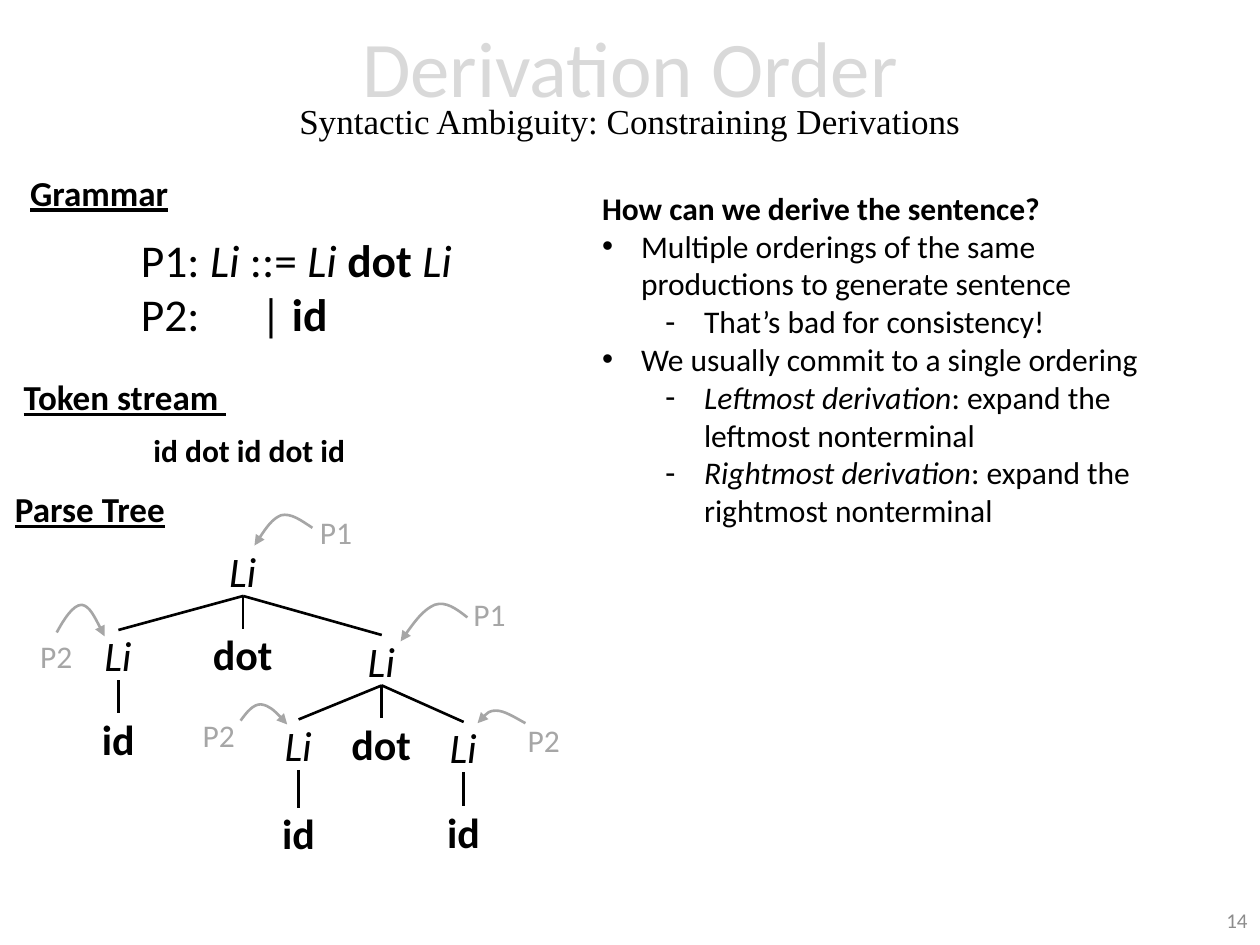
import pptx
import pptx.dml.color
import pptx.enum.shapes
import pptx.enum.text
import pptx.oxml
import pptx.oxml.ns
import pptx.util
from pptx.util import Inches

BLACK, GREY = "000000", "A6A6A6"
ALIGN = pptx.enum.text.PP_ALIGN
MIDDLE = pptx.enum.text.MSO_ANCHOR.MIDDLE
NODE_HEIGHT = 0.4
NODE_WIDTHS = {"Li": 0.42, "dot": 0.68, "id": 0.46}

# name: (text, centre x, top)
NODES = {
    "root": ("Li", 1.93, 4.33),
    "left": ("Li", 0.94, 5.0),
    "left id": ("id", 0.94, 5.66),
    "dot": ("dot", 1.93, 4.99),
    "right": ("Li", 3.03, 5.04),
    "right left": ("Li", 2.37, 5.71),
    "right left id": ("id", 2.37, 6.41),
    "right dot": ("dot", 3.03, 5.7),
    "right right": ("Li", 3.68, 5.73),
    "right right id": ("id", 3.68, 6.4),
}
EDGES = [
    ("root", "left"), ("root", "dot"), ("root", "right"), ("left", "left id"),
    ("right", "right left"), ("right", "right dot"), ("right", "right right"),
    ("right left", "right left id"), ("right right", "right right id"),
]
PRODUCTIONS = [("P1", 2.44, 4.02), ("P1", 3.66, 4.67), ("P2", 0.22, 5.01),
               ("P2", 1.51, 5.63), ("P2", 4.09, 5.67)]
# start point, then two Bezier segments of three points each
ARROWS = [
    [(2.48, 4.19), (2.39, 4.13), (2.31, 4.07), (2.23, 4.09), (2.16, 4.12), (2.09, 4.22), (2.02, 4.33)],
    [(3.71, 4.9), (3.62, 4.83), (3.54, 4.77), (3.45, 4.8), (3.36, 4.84), (3.27, 4.96), (3.18, 5.09)],
    [(0.45, 5.02), (0.51, 4.91), (0.58, 4.8), (0.65, 4.8), (0.71, 4.81), (0.77, 4.93), (0.83, 5.05)],
    [(1.91, 5.72), (1.96, 5.65), (2.01, 5.59), (2.07, 5.59), (2.14, 5.6), (2.21, 5.67), (2.28, 5.75)],
    [(4.17, 5.74), (4.08, 5.69), (4, 5.64), (3.94, 5.64), (3.88, 5.64), (3.83, 5.69), (3.79, 5.74)],
]
HEADINGS = [("Grammar", 0.14, 1.35, 1.45, 0.98),
            ("Token stream ", 0.09, 2.97, 2.24, 0.41),
            ("Parse Tree", 0.02, 3.86, 1.45, 0.61)]
# level (None for the lead line), runs
ANSWER = [
    (None, [("How can we derive the sentence?", "b")]),
    (0, [("Multiple orderings of the same productions to generate sentence", "")]),
    (1, [("That’s bad for consistency!", "")]),
    (0, [("We usually commit to a single ordering", "")]),
    (1, [("Leftmost derivation", "i"), (": expand the leftmost nonterminal", "")]),
    (1, [("Rightmost derivation", "i"), (": expand the rightmost nonterminal", "")]),
]


def color(hex_string):
    return pptx.dml.color.RGBColor.from_string(hex_string)


def add_xml(parent, tag, **attributes):
    element = pptx.oxml.parse_xml(f"<a:{tag} {pptx.oxml.ns.nsdecls('a')}/>")
    for name, value in attributes.items():
        element.set(name, str(value))
    parent.append(element)
    return element


def set_font(font, size, hex_string=BLACK, name="Calibri"):
    font.name, font.size = name, pptx.util.Pt(size)
    font.color.rgb = color(hex_string)


def add_runs(p, runs):
    """Add (text, style) runs; the style holds b for bold and i for italic."""
    for text, style in runs:
        r = p.add_run()
        r.text = text
        if "b" in style:
            r.font.bold = True
        if "i" in style:
            r.font.italic = True


def add_box(s, left, top, width, height, wrap=True):
    sp = s.shapes.add_textbox(*map(Inches, (left, top, width, height)))
    sp.text_frame.word_wrap = wrap
    return sp


def add_label(s, text, left, top, width, height, size, hex_string=BLACK, wrap=False):
    sp = add_box(s, left, top, width, height, wrap)
    p = sp.text_frame.paragraphs[0]
    p.text = text
    set_font(p.font, size, hex_string)
    return sp


def add_title(s):
    tf = add_box(s, 0, 0.01, 10, 1.45).text_frame
    tf.vertical_anchor = MIDDLE
    p = tf.paragraphs[0]
    p.alignment, p.line_spacing = ALIGN.CENTER, 0.7
    r = p.add_run()
    r.text = "Derivation Order"
    set_font(r.font, 45, "D9D9D9")
    p.add_line_break()
    r = p.add_run()
    r.text = "Syntactic Ambiguity: Constraining Derivations"
    set_font(r.font, 20, name="Times New Roman")


def add_heading(s, text, *place):
    p = add_label(s, text, *place, 20, wrap=True).text_frame.paragraphs[0]
    p.line_spacing, p.space_before = 0.9, pptx.util.Pt(10)
    p.font.bold = p.font.underline = True


def add_grammar(s):
    tf = add_box(s, 1.02, 1.79, 3.08, 0.98).text_frame
    first, second = tf.paragraphs[0], tf.add_paragraph()
    add_runs(first, [("P1:", ""), (" Li", "i"), (" ::= ", ""), ("Li ", "i"),
                     ("dot ", "b"), ("Li", "i")])
    add_runs(second, [("P2:\t| ", ""), ("id", "b")])
    tabs = add_xml(second._p.get_or_add_pPr(), "tabLst")
    add_xml(tabs, "tab", pos=Inches(0.95), algn="l")
    for p in tf.paragraphs:
        set_font(p.font, 26)


def add_answer(s):
    tf = add_box(s, 4.68, 1.45, 4.56, 3.13).text_frame
    for i, (level, runs) in enumerate(ANSWER):
        p = tf.add_paragraph() if i else tf.paragraphs[0]
        add_runs(p, runs)
        if level is not None:
            p.level = level
            pPr = p._p.get_or_add_pPr()
            pPr.set("marL", str(Inches(0.31 + 0.5 * level)))
            pPr.set("indent", str(Inches(-0.31)))
            add_xml(pPr, "buFont", typeface="Arial")
            add_xml(pPr, "buChar", char="•-"[level])
        set_font(p.font, 18)


def add_node(s, text, center, top):
    width = NODE_WIDTHS[text]
    sp = add_label(s, text, center - width / 2, top, width, NODE_HEIGHT, 24)
    tf = sp.text_frame
    tf.margin_top = tf.margin_bottom = 0
    font = tf.paragraphs[0].font
    font.italic, font.bold = text == "Li", text != "Li"
    return sp


def add_edge(s, parent, child):
    line = s.shapes.add_connector(pptx.enum.shapes.MSO_CONNECTOR.STRAIGHT, 0, 0, 0, 0)
    line.begin_connect(parent, 2)
    line.end_connect(child, 0)
    line.line.color.rgb, line.line.width = color(BLACK), pptx.util.Pt(1.5)
    add_xml(line._element.spPr, "effectLst")


def add_curved_arrow(s, points):
    start, *rest = [(Inches(x), Inches(y)) for x, y in points]
    builder = s.shapes.build_freeform(*start)
    builder.add_line_segments(rest, close=False)
    sp = builder.convert_to_shape()
    sp.shadow.inherit = False
    sp.fill.background()
    sp.line.color.rgb, sp.line.width = color(GREY), pptx.util.Pt(1.5)
    add_xml(sp.line._get_or_add_ln(), "tailEnd", type="triangle")
    segments = sp._element.xpath(".//a:lnTo")
    outline = segments[0].getparent()
    for i in range(0, len(segments), 3):
        curve = add_xml(outline, "cubicBezTo")
        for segment in segments[i:i + 3]:
            curve.append(segment[0])
            outline.remove(segment)


def main():
    prs = pptx.Presentation()
    prs.slide_width, prs.slide_height = Inches(10), Inches(7.5)
    s = prs.slides.add_slide(prs.slide_layouts[6])
    add_title(s)
    for heading in HEADINGS:
        add_heading(s, *heading)
    add_grammar(s)
    sp = add_label(s, "id dot id dot id", 1.12, 3.37, 1.8, 0.4, 18)
    sp.text_frame.paragraphs[0].font.bold = True
    nodes = {name: add_node(s, *node) for name, node in NODES.items()}
    for parent, child in EDGES:
        add_edge(s, nodes[parent], nodes[child])
    for text, left, top in PRODUCTIONS:
        add_label(s, text, left, top, 0.46, 0.4, 18, GREY)
    for points in ARROWS:
        add_curved_arrow(s, points)
    add_answer(s)
    sp = add_label(s, "14", 7.75, 7.1, 2.25, 0.4, 12, "8C8C8C", wrap=True)
    sp.text_frame.vertical_anchor = MIDDLE
    sp.text_frame.paragraphs[0].alignment = ALIGN.RIGHT
    prs.save("out.pptx")


if __name__ == "__main__":
    main()
